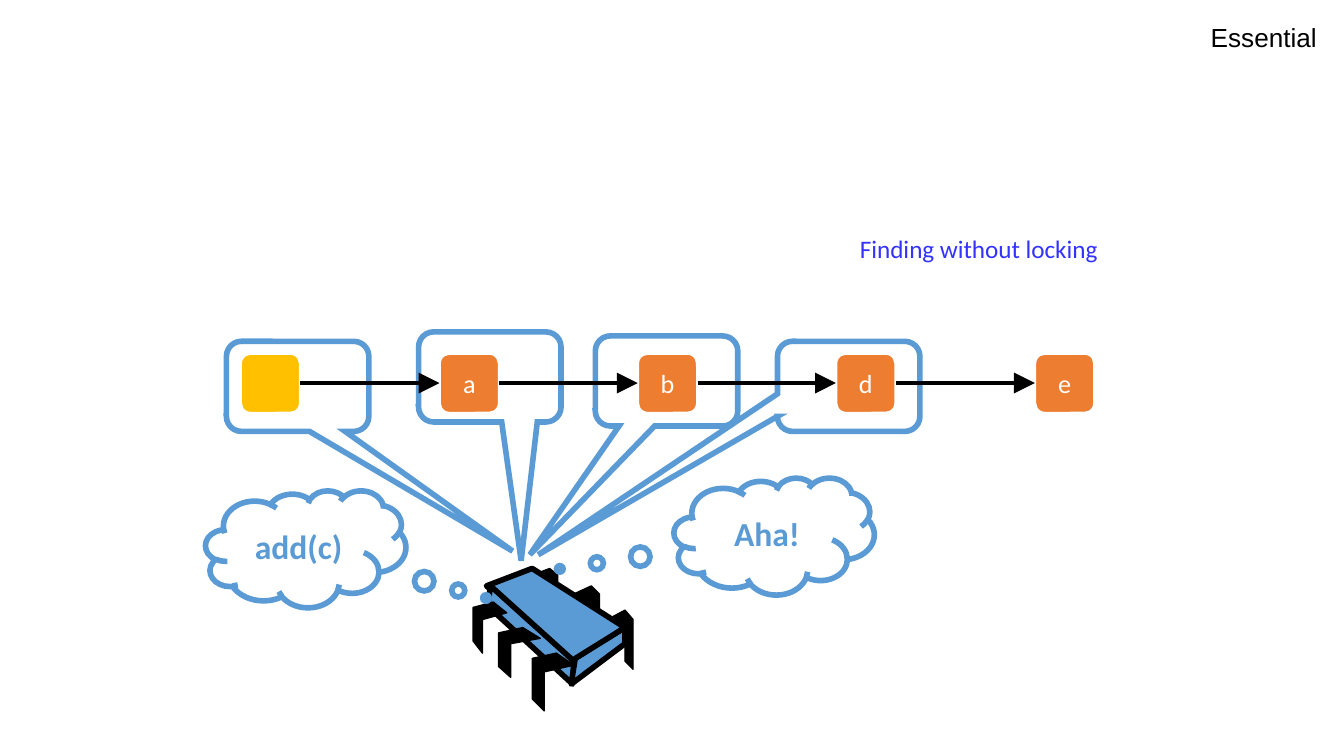
"""Build the slide on finding list nodes without locking."""
import pptx
import pptx.util
import pptx.dml.color
import pptx.enum.shapes
import pptx.enum.text
import lxml.etree
import pptx.oxml.ns

PX = 4572
SHAPE = pptx.enum.shapes.MSO_SHAPE
COLORS = {
    "ink": "000000",
    "blue": "5B9BD5",
    "sentinel": "FFC000",
    "node": "ED7D31",
    "white": "FFFFFF",
    "caption": "3333FF",
}


def paint(shape, fill, line, width):
    shape.shadow.inherit = False
    if fill:
        shape.fill.solid()
        shape.fill.fore_color.rgb = pptx.dml.color.RGBColor.from_string(COLORS[fill])
    else:
        shape.fill.background()
    shape.line.color.rgb = pptx.dml.color.RGBColor.from_string(COLORS[line])
    shape.line.width = pptx.util.Pt(width)


def write(shape, text, size, color, font="Calibri", bold=False, centered=True):
    frame = shape.text_frame
    frame.word_wrap = True
    paragraph = frame.paragraphs[0]
    if centered:
        frame.vertical_anchor = pptx.enum.text.MSO_ANCHOR.MIDDLE
        paragraph.alignment = pptx.enum.text.PP_ALIGN.CENTER
    run = paragraph.add_run()
    run.text = text
    run.font.name = font
    run.font.size = pptx.util.Pt(size)
    run.font.bold = bold
    run.font.color.rgb = pptx.dml.color.RGBColor.from_string(COLORS[color])


deck = pptx.Presentation()
deck.slide_width = 2000 * PX
deck.slide_height = 1125 * PX
slide = deck.slides.add_slide(deck.slide_layouts[6])
shapes = slide.shapes

far_legs = [
    [(904, 922), (930, 908), (942, 922), (942, 996), (930, 984), (930, 934), (904, 946)],
    [(854, 884), (880, 872), (892, 884), (892, 958), (880, 946), (880, 896), (854, 908)],
    [(792, 856), (818, 846), (830, 856), (830, 922), (818, 910), (818, 868), (792, 878)],
]
body_faces = [
    [(792, 846), (930, 934), (852, 986), (724, 872)],
    [(730, 872), (854, 984), (852, 1018), (726, 902)],
    [(930, 934), (930, 958), (850, 1018), (856, 980)],
]
near_legs = [
    [(828, 972), (854, 990), (810, 1000), (810, 1058), (792, 1040), (792, 980)],
    [(778, 934), (804, 950), (760, 958), (760, 1008), (742, 992), (742, 942)],
    [(734, 896), (754, 912), (718, 922), (718, 972), (704, 954), (704, 904)],
]
for outlines, fill, width in [
    (far_legs, "ink", 0.75),
    (body_faces, "blue", 3),
    (near_legs, "ink", 0.75),
]:
    for corners in outlines:
        outline = shapes.build_freeform(*corners[0], scale=PX)
        outline.add_line_segments(corners[1:], close=True)
        paint(outline.convert_to_shape(), fill, "ink", width)

callout, cloud = SHAPE.ROUNDED_RECTANGULAR_CALLOUT, SHAPE.CLOUD_CALLOUT
for preset, left, top, width, height, tip_x, tip_y, thought in [
    (callout, 337, 508, 212, 134, 1.51, 1.83, ""),
    (callout, 623, 494, 212, 134, 0.22, 2.04, ""),
    (callout, 886, 500, 212, 134, -0.96, 1.93, ""),
    (cloud, 306, 730, 298, 174, 0.9, 0.42, "add(c)"),
    (callout, 1157, 508, 212, 134, -2.18, 1.87, ""),
    (cloud, 1003, 711, 298, 174, -1.07, 0.28, "Aha!"),
]:
    bubble = shapes.add_shape(preset, left * PX, top * PX, width * PX, height * PX)
    bubble.adjustments[0] = tip_x
    bubble.adjustments[1] = tip_y
    paint(bubble, None, "blue", 3)
    outline_xml = bubble._element.spPr.find(pptx.oxml.ns.qn("a:ln"))
    lxml.etree.SubElement(outline_xml, pptx.oxml.ns.qn("a:miter"), lim="800000")
    if thought:
        write(bubble, thought, 18, "blue", bold=True)

caption = shapes.add_textbox(1260 * PX, 338 * PX, 426 * PX, 82 * PX)
write(caption, "Finding without locking", 13.5, "caption", centered=False)

node_size, node_top = 89, 526
node_lefts = [round(358 + 295.5 * i) for i in range(5)]
for left, key in zip(node_lefts, ["", "a", "b", "d", "e"]):
    node = shapes.add_shape(
        SHAPE.ROUNDED_RECTANGLE, left * PX, node_top * PX, node_size * PX, node_size * PX)
    paint(node, "node" if key else "sentinel", "white", 1.5)
    if key:
        frame = node.text_frame
        frame.margin_left = frame.margin_right = 14 * PX
        frame.margin_top = frame.margin_bottom = 8 * PX
        write(node, key, 14, "white")

link_y = node_top + node_size // 2
for left, next_left in zip(node_lefts, node_lefts[1:]):
    link = shapes.add_connector(
        pptx.enum.shapes.MSO_CONNECTOR.STRAIGHT,
        (left + node_size) * PX, link_y * PX, next_left * PX, link_y * PX)
    link.line.color.rgb = pptx.dml.color.RGBColor.from_string(COLORS["ink"])
    link.line.width = pptx.util.Pt(2.25)
    link_xml = link._element.spPr
    lxml.etree.SubElement(
        link_xml.find(pptx.oxml.ns.qn("a:ln")), pptx.oxml.ns.qn("a:tailEnd"),
        type="triangle", w="lg", len="lg")
    lxml.etree.SubElement(link_xml, pptx.oxml.ns.qn("a:effectLst"))

label = shapes.add_textbox(1782 * PX, 22 * PX, 200 * PX, 68 * PX)
write(label, "Essential", 14, "ink", font="Arial", centered=False)
label.text_frame.word_wrap = False
label.text_frame.auto_size = pptx.enum.text.MSO_AUTO_SIZE.SHAPE_TO_FIT_TEXT

deck.save("out.pptx")
